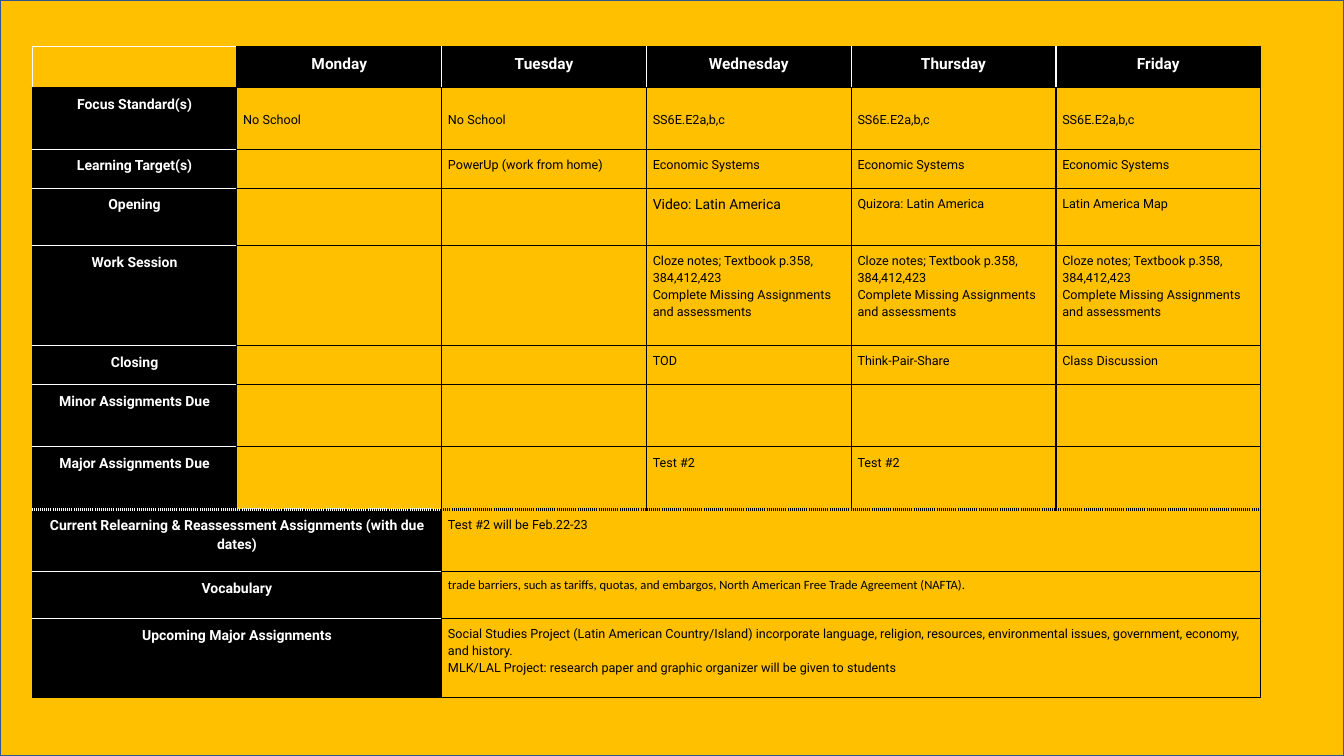
"""Build a weekly lesson plan slide with a table of days and tasks."""
from dataclasses import dataclass

from lxml.etree import SubElement
from pptx import Presentation
from pptx.dml.color import RGBColor
from pptx.enum.shapes import MSO_SHAPE as Shape
from pptx.enum.text import PP_ALIGN as Align
from pptx.oxml import parse_xml
from pptx.oxml.ns import nsdecls, qn
from pptx.table import _Cell as Cell
from pptx.util import Cm, Pt

BLACK, WHITE, GOLD, NAVY = "000000", "FFFFFF", "FFC000", "325491"
COLS = 6
WIDTH = 5.16
INSET = 0.16
DROP = 0.58
MERGED = 8


@dataclass
class Row:
    """One table row: its height in cm, its label and its other cells."""
    height: float
    label: str
    texts: tuple[str, ...] = ()


@dataclass
class Style:
    """How the text of a cell looks."""
    size: float = 9
    face: str = "Roboto"
    color: str = BLACK
    bold: bool = False
    align: Align = Align.LEFT
    space: float | None = 1.15
    top: float = INSET


CODE = "SS6E.E2a,b,c"
GOAL = "Economic Systems"
WORK = ("Cloze notes; Textbook p.358, 384,412,423\n"
        "Complete Missing Assignments and assessments")
TEST = "Test #2"
ROWS = [
    Row(1.04, "", ("Monday", "Tuesday", "Wednesday", "Thursday", "Friday")),
    Row(1.55, "Focus Standard(s)", ("No School", "No School", CODE, CODE, CODE)),
    Row(0.98, "Learning Target(s)",
        ("", "PowerUp (work from home)", GOAL, GOAL, GOAL)),
    Row(1.45, "Opening",
        ("", "", "Video: Latin America", "Quizora: Latin America",
         "Latin America Map")),
    Row(2.52, "Work Session", ("", "", WORK, WORK, WORK)),
    Row(0.98, "Closing", ("", "", "TOD", "Think-Pair-Share", "Class Discussion")),
    Row(1.57, "Minor Assignments Due"),
    Row(1.57, "Major Assignments Due", ("", "", TEST, TEST, "")),
    Row(1.57, "Current Relearning & Reassessment Assignments (with due dates)",
        ("", "Test #2 will be Feb.22-23")),
    Row(1.19, "Vocabulary",
        ("", "trade barriers, such as tariffs, quotas, and embargos, "
             "North American Free Trade Agreement (NAFTA).")),
    Row(1.99, "Upcoming Major Assignments",
        ("", "Social Studies Project (Latin American Country/Island) incorporate "
             "language, religion, resources, environmental issues, government, "
             "economy, and history.\nMLK/LAL Project: research paper and graphic "
             "organizer will be given to students")),
]
LAST = len(ROWS) - 1


def rgb(code: str) -> RGBColor:
    """Turn a hex string into a colour."""
    return RGBColor.from_string(code)


def is_dark(row: int, col: int) -> bool:
    """Tell whether a cell is a black heading or label."""
    if row == 0:
        return col > 0
    return col == 0 or (row >= MERGED and col == 1)


def pick(row: int, col: int) -> Style:
    """Choose the text style of a cell."""
    if is_dark(row, col):
        size = 11 if row == 0 else 10
        return Style(size, color=WHITE, bold=True, align=Align.CENTER)
    if row == 1:
        return Style(top=DROP)
    if (row, col) == (3, 3):
        return Style(size=10)
    if row == 9:
        return Style(face="Calibri", space=None)
    return Style()


def write(cell: Cell, text: str, style: Style) -> None:
    """Put styled text in a cell."""
    cell.margin_left = cell.margin_right = Cm(INSET)
    cell.margin_top = Cm(style.top if text else 0)
    cell.margin_bottom = Cm(INSET if text else 0)
    cell.text = text
    for para in cell.text_frame.paragraphs:
        para.alignment = style.align
        if style.space:
            para.line_spacing = style.space
        font = para.font
        font.size = Pt(style.size)
        font.name = style.face
        font.bold = style.bold
        font.color.rgb = rgb(style.color)


def edges(row: int, col: int) -> dict[str, tuple[str, bool]]:
    """Give the colour of each cell edge and whether it is dotted."""
    head, label = row == 0, row > 0 and is_dark(row, col)
    corner = head and col == 0
    white = {
        "L": corner or (head and col > 1),
        "R": head and 0 < col < COLS - 1,
        "T": corner or (label and row > 1),
        "B": label and row < LAST,
    }
    dots = {"T": row == MERGED, "B": row == MERGED - 1}
    return {side: (WHITE if on else BLACK, dots.get(side, False))
            for side, on in white.items()}


def border(cell: Cell, row: int, col: int) -> None:
    """Draw the four edges of a cell."""
    props = cell._tc.get_or_add_tcPr()
    for spot, (side, (color, dotted)) in enumerate(edges(row, col).items()):
        line = parse_xml(f'<a:ln{side} {nsdecls("a")}/>')
        line.set("w", str(Pt(2.25 if dotted else 1)))
        fill = SubElement(line, qn("a:solidFill"))
        SubElement(fill, qn("a:srgbClr")).set("val", color)
        dash = SubElement(line, qn("a:prstDash"))
        dash.set("val", "dot" if dotted else "solid")
        props.insert(spot, line)


def main() -> None:
    """Make the slide and save it."""
    deck = Presentation()
    deck.slide_width, deck.slide_height = Cm(33.87), Cm(19.05)
    slide = deck.slides.add_slide(deck.slide_layouts[6])

    back = slide.shapes.add_shape(
        Shape.RECTANGLE, 0, 0, deck.slide_width, deck.slide_height)
    back.shadow.inherit = False
    back.fill.solid()
    back.fill.fore_color.rgb = rgb(GOLD)
    back.line.color.rgb = rgb(NAVY)
    back.line.width = Pt(1)

    high = sum(row.height for row in ROWS)
    plan = slide.shapes.add_table(
        len(ROWS), COLS, Cm(0.81), Cm(1.17), Cm(COLS * WIDTH), Cm(high)).table
    plan.first_row = plan.horz_banding = False
    for column in plan.columns:
        column.width = Cm(WIDTH)

    for r, row in enumerate(ROWS):
        plan.rows[r].height = Cm(row.height)
        texts = dict(enumerate((row.label, *row.texts)))
        for c in range(COLS):
            cell = plan.cell(r, c)
            write(cell, texts.get(c, ""), pick(r, c))
            if is_dark(r, c):
                cell.fill.solid()
                cell.fill.fore_color.rgb = rgb(BLACK)
            else:
                cell.fill.background()
            border(cell, r, c)
        if r >= MERGED:
            plan.cell(r, 0).merge(plan.cell(r, 1))
            plan.cell(r, 2).merge(plan.cell(r, COLS - 1))

    deck.save("out.pptx")


if __name__ == "__main__":
    main()
